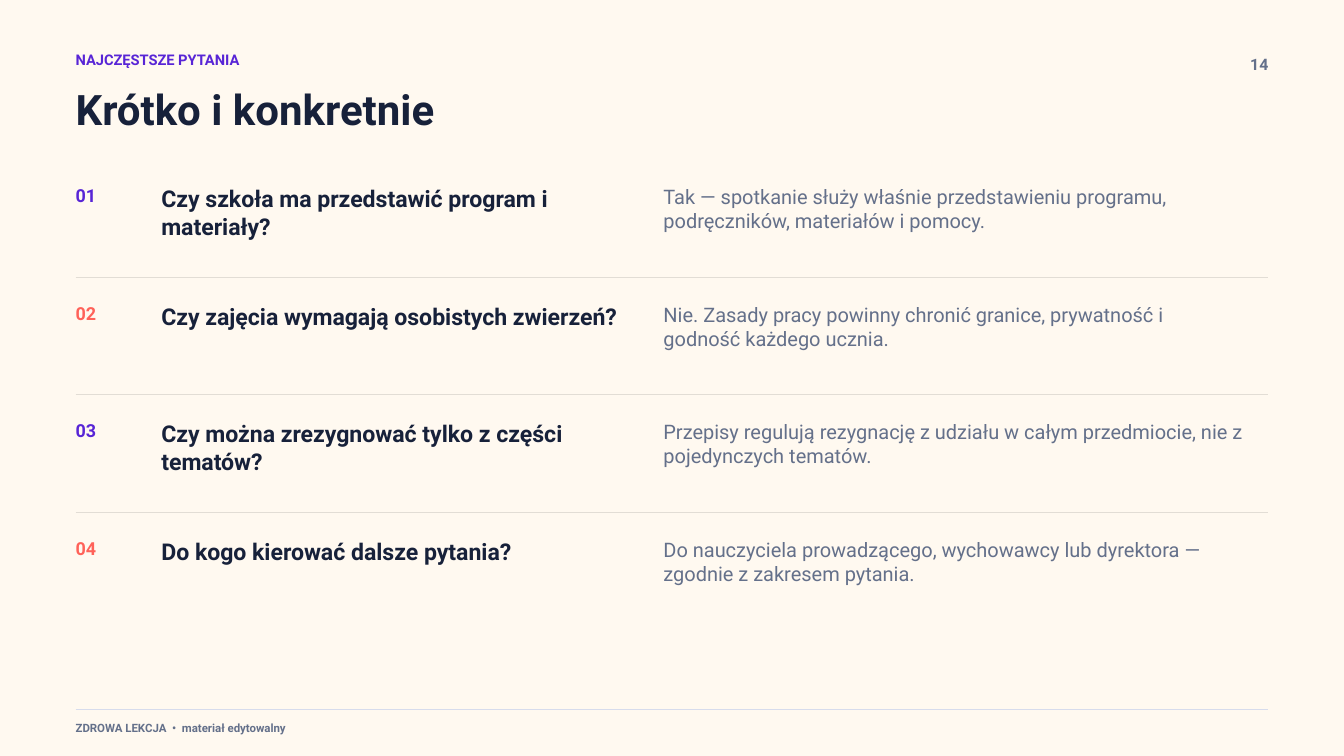
"""Build the frequently asked questions slide."""
from lxml import etree
from pptx import Presentation
from pptx.dml.color import RGBColor
from pptx.enum.shapes import MSO_CONNECTOR
from pptx.enum.text import MSO_ANCHOR, MSO_AUTO_SIZE, PP_ALIGN
from pptx.oxml.ns import qn
from pptx.util import Inches, Pt

STRAIGHT = MSO_CONNECTOR.STRAIGHT
TOP = MSO_ANCHOR.TOP
NO_FIT = MSO_AUTO_SIZE.NONE
LEFT, RIGHT = PP_ALIGN.LEFT, PP_ALIGN.RIGHT

KICKER = "NAJCZĘSTSZE PYTANIA"
TITLE = "Krótko i konkretnie"
PAGE = "14"
FOOTER = "ZDROWA LEKCJA  •  materiał edytowalny"
FAQ = [
    ("Czy szkoła ma przedstawić program i materiały?",
     "Tak — spotkanie służy właśnie przedstawieniu programu, podręczników, materiałów i pomocy."),
    ("Czy zajęcia wymagają osobistych zwierzeń?",
     "Nie. Zasady pracy powinny chronić granice, prywatność i godność każdego ucznia."),
    ("Czy można zrezygnować tylko z części tematów?",
     "Przepisy regulują rezygnację z udziału w całym przedmiocie, nie z pojedynczych tematów."),
    ("Do kogo kierować dalsze pytania?",
     "Do nauczyciela prowadzącego, wychowawcy lub dyrektora — zgodnie z zakresem pytania."),
]

FONT = "Roboto"
COLORS = {
    "background": "FFF9F0",
    "ink": "17213A",
    "muted": "64708A",
    "violet": "5825D6",
    "coral": "FF6259",
    "divider": "E2DDD5",
    "footer_rule": "D7DCEC",
}
MARGIN, RIGHT_EDGE = 0.75, 12.58
QUESTION_X, ANSWER_X = 1.6, 6.58
FIRST_ROW, ROW_PITCH, DIVIDER_DROP = 1.83, 3.5 / 3, 0.92


def color(name):
    return RGBColor.from_string(COLORS[name])


def write(sp, text, box, size, ink, bold=True, align=LEFT):
    sp.left, sp.top, sp.width, sp.height = (Inches(v) for v in box)
    tf = sp.text_frame
    tf.word_wrap = True
    tf.auto_size = NO_FIT
    tf.vertical_anchor = TOP
    tf.margin_left = tf.margin_right = tf.margin_top = tf.margin_bottom = 0
    tf.text = text
    p = tf.paragraphs[0]
    p.alignment = align
    p.font.name = FONT
    p.font.size = Pt(size)
    p.font.bold = bold
    p.font.color.rgb = color(ink)


def add_text(s, text, box, *style, **options):
    write(s.shapes.add_textbox(0, 0, 0, 0), text, box, *style, **options)


def add_rule(s, y, ink):
    rule = s.shapes.add_connector(
        STRAIGHT, Inches(MARGIN), Inches(y), Inches(RIGHT_EDGE), Inches(y))
    rule.line.color.rgb = color(ink)
    rule.line.width = Pt(0.75)
    etree.SubElement(rule._element.spPr, qn("a:effectLst"))


def main():
    prs = Presentation()
    prs.slide_width, prs.slide_height = Inches(13.33), Inches(7.5)
    s = prs.slides.add_slide(prs.slide_layouts[5])
    s.background.fill.solid()
    s.background.fill.fore_color.rgb = color("background")

    add_text(s, KICKER, (MARGIN, 0.5, 7.29, 0.25), 10.5, "violet")
    write(s.shapes.title, TITLE, (MARGIN, 0.83, 10.83, 0.81), 30, "ink")
    add_text(s, PAGE, (12.08, 0.54, 0.5, 0.27), 11.3, "muted", align=RIGHT)

    for i, (question, answer) in enumerate(FAQ):
        y = FIRST_ROW + i * ROW_PITCH
        accent = ("violet", "coral")[i % 2]
        add_text(s, f"{i + 1:02}", (MARGIN, y, 0.6, 0.31), 12.8, accent)
        add_text(s, question, (QUESTION_X, y, 4.58, 0.55), 16.5, "ink")
        add_text(s, answer, (ANSWER_X, y, 5.75, 0.71), 14.3, "muted", bold=False)
        if i < len(FAQ) - 1:
            add_rule(s, y + DIVIDER_DROP, "divider")

    add_rule(s, 7.04, "footer_rule")
    add_text(s, FOOTER, (MARGIN, 7.15, 4.48, 0.19), 8.2, "muted")
    prs.save("out.pptx")


if __name__ == "__main__":
    main()
